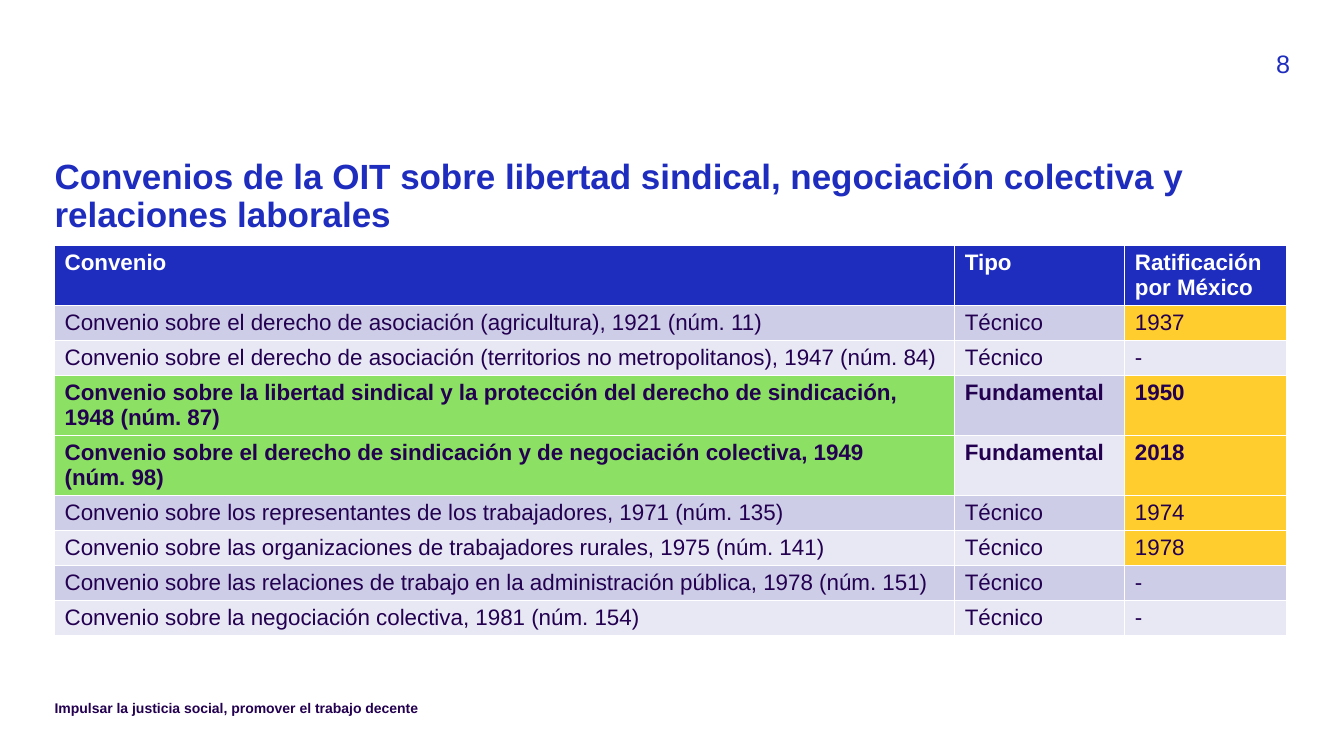
from pptx import Presentation
from pptx.dml.color import RGBColor
from pptx.enum.text import MSO_ANCHOR as Anchor, PP_ALIGN as Align
from pptx.util import Pt

BLUE, PURPLE, WHITE = "1E2DBE", "230050", "FFFFFF"
GREEN, YELLOW = "8CE164", "FFCD2D"
BANDS = ("CDCDE8", "E8E8F4")
NBSP = chr(160)  # keeps "núm." on the same line as its number

HEADINGS = ("Convenio", "Tipo", "Ratificación por México")
COL_WIDTHS = (643, 121.5, 115.5)
ROW_HEIGHT, TALL_ROW = 25, 42

# Name, year, number, type, year of ratification
CONVENTIONS = (
    ("el derecho de asociación (agricultura)", 1921, 11, "Técnico", "1937"),
    ("el derecho de asociación (territorios no metropolitanos)", 1947, 84, "Técnico", "-"),
    ("la libertad sindical y la protección del derecho de sindicación", 1948, 87,
     "Fundamental", "1950"),
    ("el derecho de sindicación y de negociación colectiva", 1949, 98, "Fundamental", "2018"),
    ("los representantes de los trabajadores", 1971, 135, "Técnico", "1974"),
    ("las organizaciones de trabajadores rurales", 1975, 141, "Técnico", "1978"),
    ("las relaciones de trabajo en la administración pública", 1978, 151, "Técnico", "-"),
    ("la negociación colectiva", 1981, 154, "Técnico", "-"),
)


def color(hex_string):
    return RGBColor.from_string(hex_string)


def style(p, size, hex_string, bold=False):
    p.font.name, p.font.size, p.font.bold = "Arial", Pt(size), bold
    p.font.color.rgb = color(hex_string)


def fill_text(sp, text, size, hex_string, bold=False, align=Align.LEFT):
    tf = sp.text_frame
    tf.word_wrap = True
    tf.margin_left = tf.margin_top = tf.margin_right = tf.margin_bottom = 0
    tf.vertical_anchor = Anchor.MIDDLE
    p = tf.paragraphs[0]
    p.text, p.alignment = text, align
    style(p, size, hex_string, bold)
    return p


def add_title(s, left, top, width, height, text):
    sp = s.shapes.title
    sp.left, sp.top, sp.width, sp.height = Pt(left), Pt(top), Pt(width), Pt(height)
    fill_text(sp, text, 25, BLUE, bold=True).line_spacing = 0.9


def add_label(s, left, top, width, height, text, size, hex_string, **options):
    sp = s.shapes.add_textbox(Pt(left), Pt(top), Pt(width), Pt(height))
    fill_text(sp, text, size, hex_string, **options)


def fill_row(row, texts, fills, hex_string, bold):
    for cell, text, fill in zip(row.cells, texts, fills):
        cell.text = text
        cell.fill.solid()
        cell.fill.fore_color.rgb = color(fill)
        style(cell.text_frame.paragraphs[0], 16, hex_string, bold)


def add_conventions_table(s, left, top):
    count = len(CONVENTIONS) + 1
    table = s.shapes.add_table(count, len(HEADINGS), Pt(left), Pt(top),
                               Pt(sum(COL_WIDTHS)), Pt(count * ROW_HEIGHT)).table
    for col, width in zip(table.columns, COL_WIDTHS):
        col.width = Pt(width)

    # Header row
    header, *body = table.rows
    header.height = Pt(TALL_ROW)
    fill_row(header, HEADINGS, [BLUE] * len(HEADINGS), WHITE, bold=True)

    # Fundamental conventions are green and bold, ratified ones yellow
    for i, (row, convention) in enumerate(zip(body, CONVENTIONS)):
        name, year, number, kind, ratified = convention
        band = BANDS[i % 2]
        fundamental = kind == "Fundamental"
        row.height = Pt(TALL_ROW if fundamental else ROW_HEIGHT)
        texts = (f"Convenio sobre {name}, {year} (núm.{NBSP}{number})", kind, ratified)
        fills = (GREEN if fundamental else band, band, band if ratified == "-" else YELLOW)
        fill_row(row, texts, fills, PURPLE, fundamental)


def build_slide(prs):
    s = prs.slides.add_slide(prs.slide_layouts[5])
    left = 39
    add_title(s, left, 112.5, 883, 57,
              "Convenios de la OIT sobre libertad sindical, negociación colectiva "
              "y relaciones laborales")
    add_conventions_table(s, left, 175.5)
    # Footer and page number
    add_label(s, left, 499, 442, 14, "Impulsar la justicia social, promover el trabajo decente",
              10, PURPLE, bold=True)
    add_label(s, 879, 34, 42.5, 22, "8", 18, BLUE, align=Align.RIGHT)


def main():
    prs = Presentation()
    prs.slide_width, prs.slide_height = Pt(960), Pt(540)
    build_slide(prs)
    prs.save("out.pptx")


if __name__ == "__main__":
    main()
